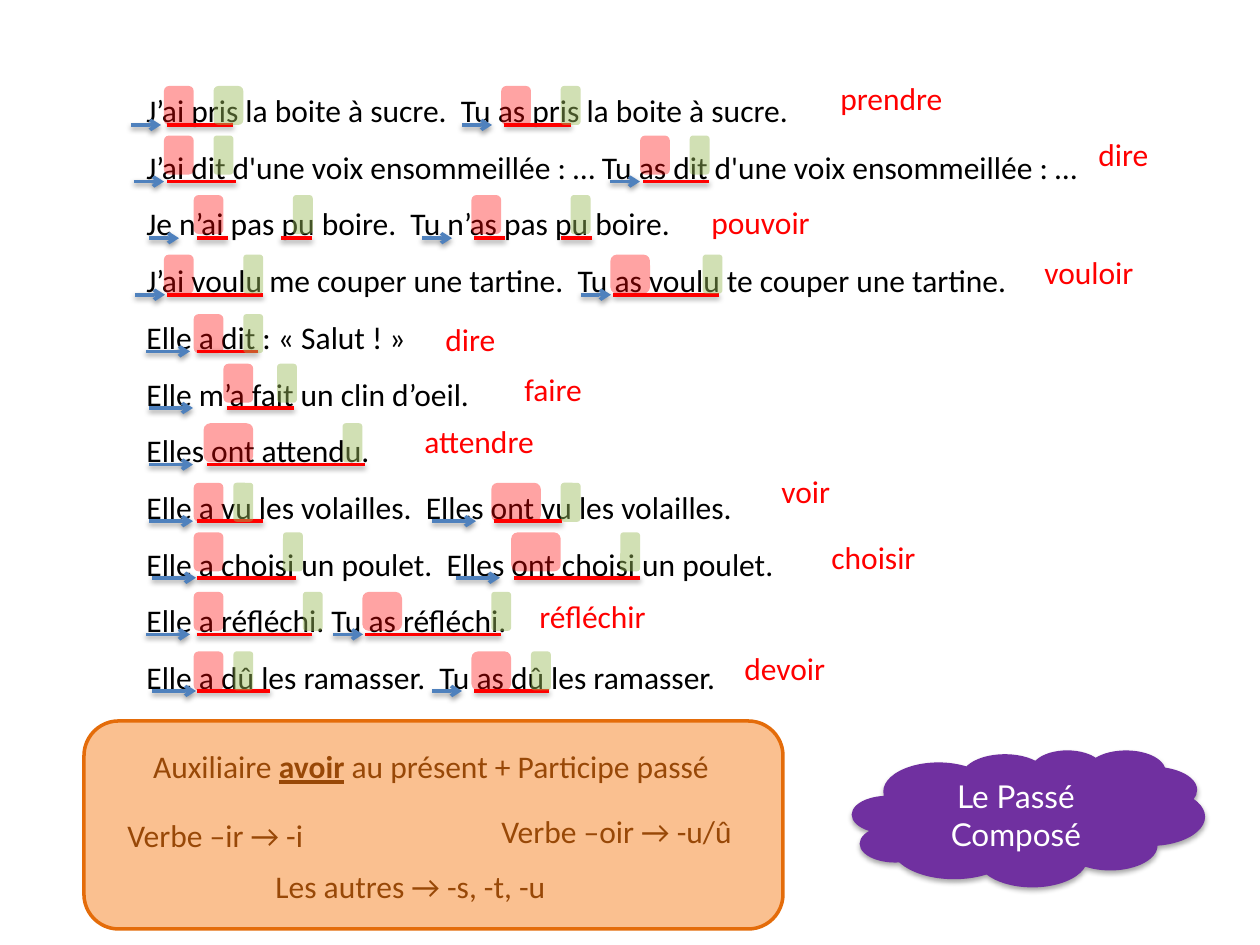
from lxml import etree
from pptx import Presentation
from pptx.dml.color import RGBColor
from pptx.enum.shapes import MSO_CONNECTOR, MSO_SHAPE
from pptx.enum.text import MSO_ANCHOR, PP_ALIGN
from pptx.oxml.ns import qn
from pptx.util import Pt

SCALE = 914400 / 126
STRAIGHT = MSO_CONNECTOR.STRAIGHT
ROUND, CLOUD = MSO_SHAPE.ROUNDED_RECTANGLE, MSO_SHAPE.CLOUD
LEFT, CENTER = PP_ALIGN.LEFT, PP_ALIGN.CENTER
COLORS = {
    "text": "000000", "arrow": "4F81BD", "red": "FF0000", "green": "9BBB59",
    "panel": "FAC090", "edge": "E46C0A", "rule": "984807",
    "cloud": "7030A0", "white": "FFFFFF",
}
# Highlights sit on a fine grid; rows follow the line pitch
GRID, GRID_X, GRID_Y = 9.92, 164, 86
PITCH, LINE_Y = 56.6, 125
BOX_H = 39
REACH = {"J’": 30, "Je": 30, "Tu": 30, "Elle": 44, "Elles": 44}

# Each row: sentence, infinitive, its x and y, clauses
# Each clause: subject, arrow x, underline end x,
# then in grid steps: auxiliary, its width, participle ending
ROWS = [
    ("J’ai pris la boite à sucre.  Tu as pris la boite à sucre.",
     "prendre", 828, 73, [("J’", 131, 233, 0, 3, 5), ("Tu", 462, 571, 34, 3, 40)]),
    ("J’ai dit d'une voix ensommeillée : … Tu as dit d'une voix ensommeillée : …",
     "dire", 1086, 129, [("J’", 134, 236, 0, 3, 5), ("Tu", 610, 709, 48, 3, 53)]),
    ("Je n’ai pas pu boire.  Tu n’as pas pu boire.",
     "pouvoir", 699, 197, [("Je", 149, 312, 3, 3, 13), ("Tu", 422, 592, 31, 3, 41)]),
    ("J’ai voulu me couper une tartine.  Tu as voulu te couper une tartine.",
     "vouloir", 1032, 247, [("J’", 135, 263, 0, 3, 8), ("Tu", 581, 719, 45, 4, 54.3)]),
    ("Elle a dit : « Salut ! »",
     "dire", 433, 314, [("Elle", 146, 258, 3, 3, 8)]),
    ("Elle m’a fait un clin d’oeil.",
     "faire", 512, 364, [("Elle", 149, 294, 6, 3, 11.4)]),
    ("Elles ont attendu.",
     "attendre", 412, 416, [("Elles", 149, 365, 4, 5, 18)]),
    ("Elle a vu les volailles.  Elles ont vu les volailles.",
     "voir", 769, 466, [("Elle", 149, 263, 3, 3, 7), ("Elles", 432, 562, 33, 5, 40)]),
    ("Elle a choisi un poulet.  Elles ont choisi un poulet.",
     "choisir", 819, 532, [("Elle", 152, 296, 3, 3, 12), ("Elles", 456, 640, 35, 5, 46)]),
    ("Elle a réfléchi. Tu as réfléchi.",
     "réfléchir", 527, 591, [("Elle", 146, 312, 3, 3, 14), ("Tu", 333, 501, 20, 4, 33)]),
    ("Elle a dû les ramasser.  Tu as dû les ramasser.",
     "devoir", 732, 643, [("Elle", 152, 270, 3, 3, 7), ("Tu", 432, 549, 31, 4, 37)]),
]

# Rule texts: runs (odd ones stressed), x, y, width, alignment
RULES = [
    (["Auxiliaire ", "avoir", " au présent + Participe passé"], 94, 741, 674, CENTER),
    (["Verbe –ir → -i"], 115, 810, 208, LEFT),
    (["Verbe –oir → -u/û"], 489, 806, 277, LEFT),
    (["Les autres → -s, -t, -u"], 263, 861, 333, LEFT),
]


def px(*vals):
    return [round(v * SCALE) for v in vals]


def rgb(name):
    return RGBColor.from_string(COLORS[name])


def style(para, color, face="Calibri", align=LEFT):
    para.alignment = align
    para.font.size, para.font.name = Pt(18), face
    para.font.color.rgb = rgb(color)


def shade(props, alpha, dist):
    for old in props.findall(qn("a:effectLst")):
        props.remove(old)
    effects = etree.SubElement(props, qn("a:effectLst"))
    outer = etree.SubElement(effects, qn("a:outerShdw"), blurRad=str(Pt(3.1)),
                             dist=str(Pt(dist)), dir="5400000", rotWithShape="0")
    tone = etree.SubElement(outer, qn("a:srgbClr"), val="000000")
    etree.SubElement(tone, qn("a:alpha"), val=str(alpha * 1000))


def add_text(slide, box, lines, color, align=LEFT, space=None):
    frame = slide.shapes.add_textbox(*px(*box)).text_frame
    frame.word_wrap = True
    for i, runs in enumerate(lines):
        para = frame.add_paragraph() if i else frame.paragraphs[0]
        style(para, color, align=align)
        if space:
            para.line_spacing = space
        for j, text in enumerate(runs):
            run = para.add_run()
            run.text = text
            if j % 2:
                run.font.bold = run.font.underline = True


def add_shape(slide, kind, box, color, alpha=None):
    shape = slide.shapes.add_shape(kind, *px(*box))
    shape.shadow.inherit = False
    shape.fill.solid()
    shape.fill.fore_color.rgb = rgb(color)
    shape.line.fill.background()
    if alpha:
        tone = shape.fill._xPr.find(".//" + qn("a:srgbClr"))
        etree.SubElement(tone, qn("a:alpha"), val=str(alpha * 1000))
    return shape


def add_line(slide, x1, x2, y, color, head=False):
    line = slide.shapes.add_connector(STRAIGHT, *px(x1, y, x2, y))
    line.line.color.rgb = rgb(color)
    line.line.width = Pt(2)
    if head:
        etree.SubElement(line.line._get_or_add_ln(), qn("a:tailEnd"), type="arrow")
    shade(line._element.spPr, 38, 1.6)


def main():
    prs = Presentation()
    prs.slide_width, prs.slide_height = px(1260, 945)
    slide = prs.slides.add_slide(prs.slide_layouts[6])

    # Sentences and title cloud
    add_text(slide, (134, 66, 1042, 636), [[row[0]] for row in ROWS], "text", space=1.5)
    cloud = add_shape(slide, CLOUD, (852, 750, 353, 137), "cloud")
    shade(cloud._element.spPr, 35, 1.8)
    frame = cloud.text_frame
    frame.word_wrap, frame.vertical_anchor = True, MSO_ANCHOR.MIDDLE
    frame.text = "Le Passé Composé"
    style(frame.paragraphs[0], "white", "Lato", CENTER)

    # Subject arrows, verb underlines (split around a negation), infinitives
    for i, (text, verb, x, y, clauses) in enumerate(ROWS):
        base = LINE_Y + PITCH * i
        for who, start, stop, aux, _, _ in clauses:
            add_line(slide, start, start + REACH[who], base, "arrow", head=True)
            left = GRID_X + GRID * aux + 3
            spans = [(left, stop)]
            if " pas " in text:
                spans = [(left, left + 31), (stop - 31, stop)]
            for span in spans:
                add_line(slide, *span, base, "red")
        add_text(slide, (x, y, 20 * len(verb), 50), [[verb]], "red")

    # Rule panel
    panel = add_shape(slide, ROUND, (84, 721, 699, 208), "panel")
    panel.line.color.rgb = rgb("edge")
    panel.line.width = Pt(2)
    for runs, x, y, w, align in RULES:
        add_text(slide, (x, y, w, 50), [runs], "rule", align)

    # Highlights over endings and auxiliaries
    for i, row in enumerate(ROWS):
        top = GRID_Y + GRID * int(PITCH * i / GRID + 0.25)
        for j, (_, _, _, aux, wide, end) in enumerate(row[-1]):
            tail = 2 if i or j else 3
            for step, size, color, alpha in ((end, tail, "green", 45), (aux, wide, "red", 36)):
                box = (GRID_X + GRID * step, top, GRID * size, BOX_H)
                add_shape(slide, ROUND, box, color, alpha)

    prs.save("out.pptx")


if __name__ == "__main__":
    main()
